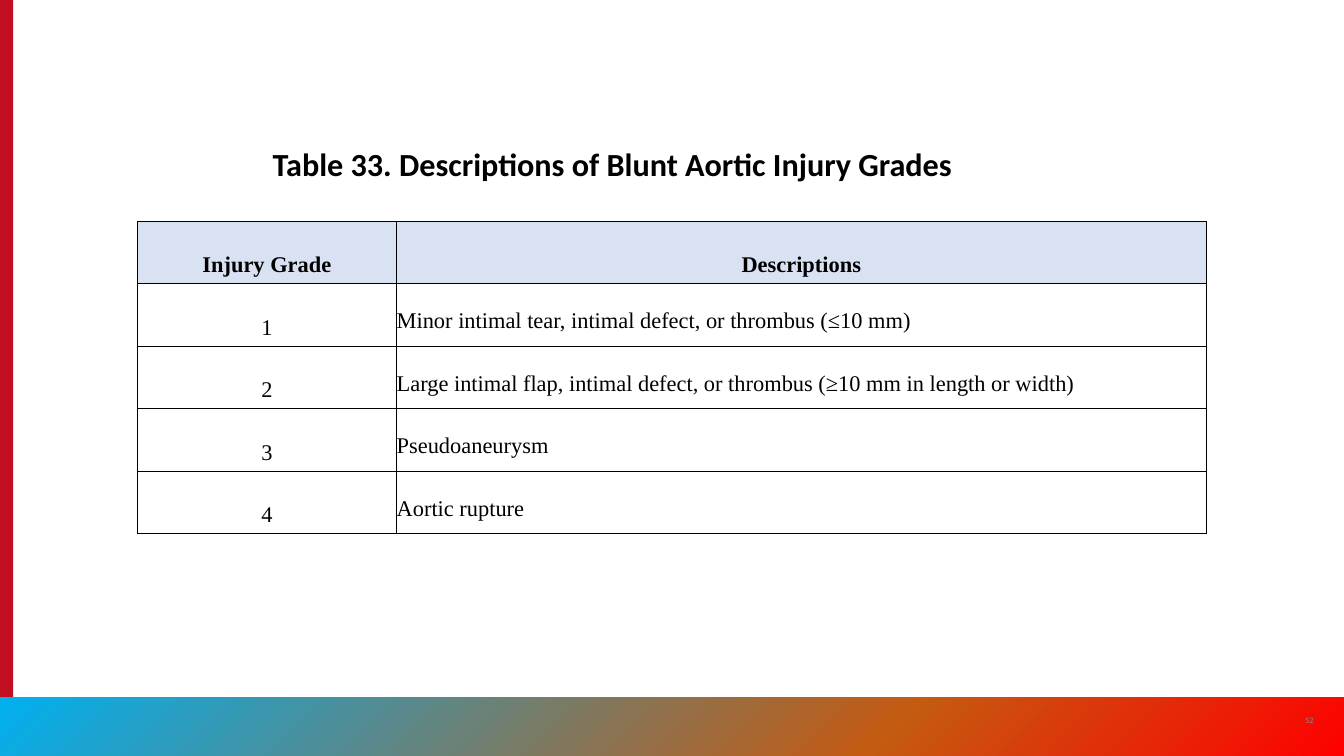
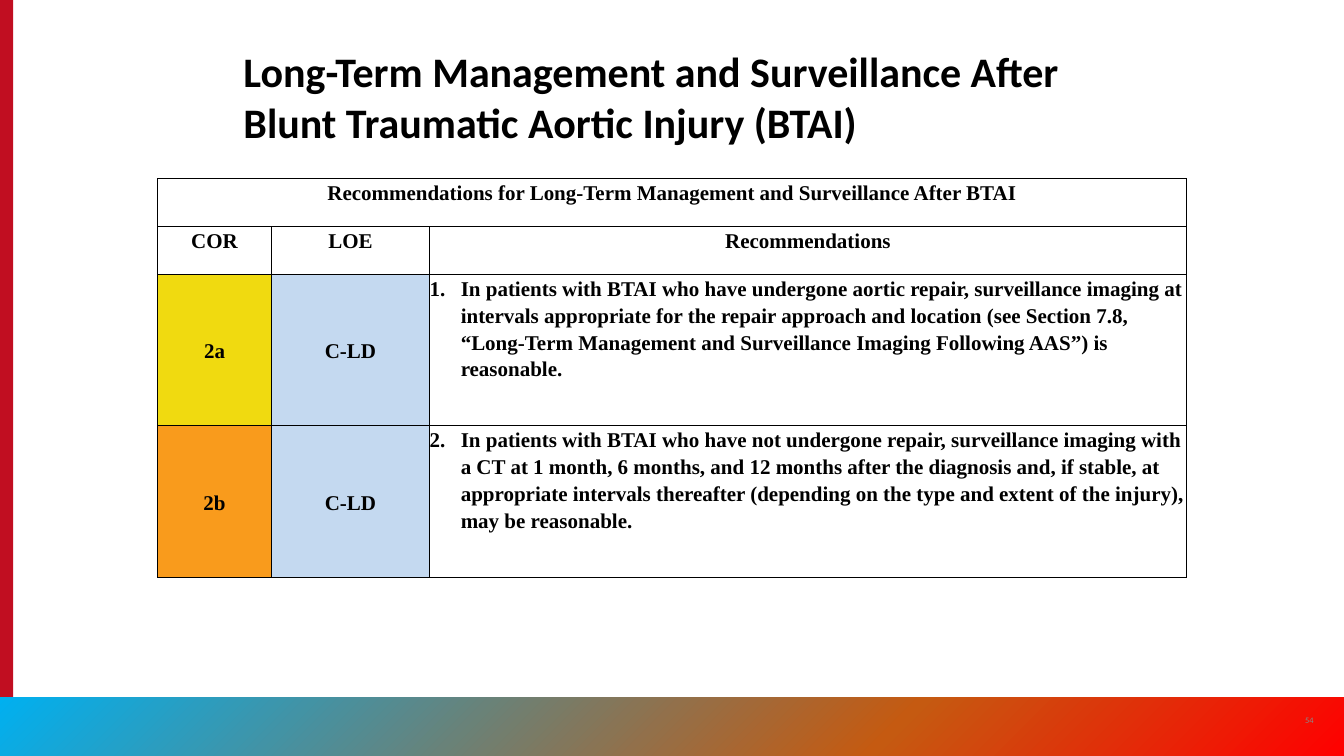
"""Builds two slides on blunt aortic injury grades and their follow-up."""
from copy import deepcopy

from lxml.etree import SubElement
from pptx import Presentation
from pptx.dml.color import RGBColor
from pptx.enum.shapes import MSO_SHAPE
from pptx.enum.text import MSO_ANCHOR, MSO_AUTO_SIZE, PP_ALIGN
from pptx.oxml import parse_xml
from pptx.oxml.ns import nsdecls, qn
from pptx.util import Cm, Pt

COLORS = {
    "black": "000000",
    "grey": "8A8B8A",
    "red edge": "C10E21",
    "band start": "00B0F0",
    "band middle": "C55A11",
    "band end": "FF0000",
    "header": "D9E2F3",
    "class 2a": "F0DA10",
    "class 2b": "F99B1C",
    "evidence": "C4D9F0",
}
WIDTH, HEIGHT, BAND_TOP = 67.73, 38.1, 35.13
TITLE_FONT, TABLE_FONT = "Calibri", "Times New Roman"
INSETS = dict.fromkeys(["margin_left", "margin_right", "margin_top", "margin_bottom"], Cm(0.2))
NO_INSETS = dict.fromkeys(INSETS, Cm(0))
TITLE_FRAME = {**INSETS, "word_wrap": True, "vertical_anchor": MSO_ANCHOR.TOP,
               "auto_size": MSO_AUTO_SIZE.SHAPE_TO_FIT_TEXT}
NUMBER_FRAME = {**INSETS, "word_wrap": False, "vertical_anchor": MSO_ANCHOR.MIDDLE,
                "auto_size": MSO_AUTO_SIZE.SHAPE_TO_FIT_TEXT}

TOPICS = [
    {
        "number": "52",
        "title": "Table 33. Descriptions of Blunt Aortic Injury Grades",
        "title size": 46,
        "title box": (13.54, 7.06, 40.67, 2.36),
        "corner": (6.91, 11.15),
        "columns": [13.08, 40.79],
        "rows": [3.15] * 5,
        "text size": 32,
        "spacing": 2.0,
        "header rows": 1,
        "header anchor": MSO_ANCHOR.MIDDLE,
        "bold body": False,
        "numbered": False,
        "fills": {(0, 0): "header", (0, 1): "header"},
        "cells": [
            ["Injury Grade", "Descriptions"],
            ["1", "Minor intimal tear, intimal defect, or thrombus (≤10 mm)"],
            ["2", "Large intimal flap, intimal defect, or thrombus (≥10 mm in length or width)"],
            ["3", "Pseudoaneurysm"],
            ["4", "Aortic rupture"],
        ],
    },
    {
        "number": "54",
        "title": "Long-Term Management and Surveillance After Blunt Traumatic Aortic Injury (BTAI)",
        "title size": 60,
        "title box": (12.07, 2.11, 43.59, 5.51),
        "corner": (7.95, 8.99),
        "columns": [5.72, 7.98, 38.13],
        "rows": [2.42, 2.42, 7.62, 7.62],
        "text size": 30,
        "spacing": 1.15,
        "header rows": 2,
        "header anchor": MSO_ANCHOR.TOP,
        "bold body": True,
        "numbered": True,
        "fills": {(2, 0): "class 2a", (3, 0): "class 2b",
                  (2, 1): "evidence", (3, 1): "evidence"},
        "cells": [
            ["Recommendations for Long-Term Management and Surveillance After BTAI"],
            ["COR", "LOE", "Recommendations"],
            ["2a", "C-LD", "In patients with BTAI who have undergone aortic repair, surveillance "
             "imaging at intervals appropriate for the repair approach and location (see Section "
             "7.8, “Long-Term Management and Surveillance Imaging Following AAS”) is reasonable."],
            ["2b", "C-LD", "In patients with BTAI who have not undergone repair, surveillance "
             "imaging with a CT at 1 month, 6 months, and 12 months after the diagnosis and, if "
             "stable, at appropriate intervals thereafter (depending on the type and extent of "
             "the injury), may be reasonable."],
        ],
    },
]


def apply(target, values):
    for attribute, value in values.items():
        setattr(target, attribute, value)


def write(paragraph, text, face, size, bold, color, layout_values):
    apply(paragraph, layout_values)
    run = paragraph.add_run()
    run.text = text
    apply(run.font, {"name": face, "size": Pt(size), "bold": bold})
    run.font.color.rgb = RGBColor.from_string(COLORS[color])


deck = Presentation()
apply(deck, {"slide_width": Cm(WIDTH), "slide_height": Cm(HEIGHT)})
base = deck.slide_layouts[5]
for footer in list(base.placeholders)[1:]:
    footer.element.getparent().remove(footer.element)
slides = [deck.slides.add_slide(base) for topic in TOPICS]

edge, band = [
    slides[0].shapes.add_shape(MSO_SHAPE.RECTANGLE, *map(Cm, box))
    for box in [(0, 0, 0.66, HEIGHT), (0, BAND_TOP, WIDTH, HEIGHT - BAND_TOP)]
]
edge.fill.solid()
edge.fill.fore_color.rgb = RGBColor.from_string(COLORS["red edge"])
band.fill.gradient()
band.fill.gradient_angle = 315
stop_list = band.element.spPr.find(qn("a:gradFill")).find(qn("a:gsLst"))
stop_list.append(deepcopy(stop_list[-1]))
for stop, position, color in zip(band.fill.gradient_stops, [0, 0.66, 1],
                                 ["band start", "band middle", "band end"]):
    stop.position = position
    stop.color.rgb = RGBColor.from_string(COLORS[color])
for decoration in [edge, band]:
    decoration.shadow.inherit = False
    decoration.line.fill.background()
    base.shapes.element.append(decoration.element)

for slide, topic in zip(slides, TOPICS):
    title = slide.shapes.title
    apply(title, dict(zip(["left", "top", "width", "height"], map(Cm, topic["title box"]))))
    apply(title.text_frame, TITLE_FRAME)
    write(title.text_frame.paragraphs[0], topic["title"], TITLE_FONT, topic["title size"],
          True, "black", {"alignment": PP_ALIGN.LEFT})

    page = slide.shapes.add_textbox(Cm(65.51), Cm(35.86), Cm(0.94), Cm(0.91)).text_frame
    apply(page, NUMBER_FRAME)
    write(page.paragraphs[0], topic["number"], TITLE_FONT, 12, False, "grey",
          {"alignment": PP_ALIGN.CENTER})

    columns, rows = topic["columns"], topic["rows"]
    grid = slide.shapes.add_table(len(rows), len(columns), *map(Cm, topic["corner"]),
                                  Cm(sum(columns)), Cm(sum(rows))).table
    apply(grid, {"first_row": False, "horz_banding": False})
    for column, width in zip(grid.columns, columns):
        column.width = Cm(width)
    for row, height in zip(grid.rows, rows):
        row.height = Cm(height)

    for r, texts in enumerate(topic["cells"]):
        if len(texts) < len(columns):
            grid.cell(r, 0).merge(grid.cell(r, len(columns) - 1))
        in_header = r < topic["header rows"]
        for c in range(len(columns)):
            cell = grid.cell(r, c)
            is_statement = not in_header and c == len(columns) - 1
            if in_header:
                anchor = topic["header anchor"]
            else:
                anchor = MSO_ANCHOR.TOP if is_statement else MSO_ANCHOR.MIDDLE
            apply(cell, {**NO_INSETS, "vertical_anchor": anchor})
            if (r, c) in topic["fills"]:
                cell.fill.solid()
                cell.fill.fore_color.rgb = RGBColor.from_string(COLORS[topic["fills"][r, c]])
            else:
                cell.fill.background()
            for order, side in enumerate(["lnL", "lnR", "lnT", "lnB"]):
                cell._tc.tcPr.insert(order, parse_xml(
                    f'<a:{side} {nsdecls("a")} w="12700"><a:solidFill>'
                    f'<a:srgbClr val="{COLORS["black"]}"/></a:solidFill></a:{side}>'))
            if c >= len(texts):
                continue
            paragraph = cell.text_frame.paragraphs[0]
            if is_statement and topic["numbered"]:
                properties = paragraph._p.get_or_add_pPr()
                properties.set("marL", str(Cm(1.57)))
                properties.set("indent", str(-Cm(1.57)))
                SubElement(properties, qn("a:buAutoNum"), type="arabicPeriod",
                           startAt=str(r - topic["header rows"] + 1))
            write(paragraph, texts[c], TABLE_FONT, topic["text size"],
                  in_header or topic["bold body"], "black",
                  {"alignment": PP_ALIGN.LEFT if is_statement else PP_ALIGN.CENTER,
                   "line_spacing": topic["spacing"]})

deck.save("out.pptx")
